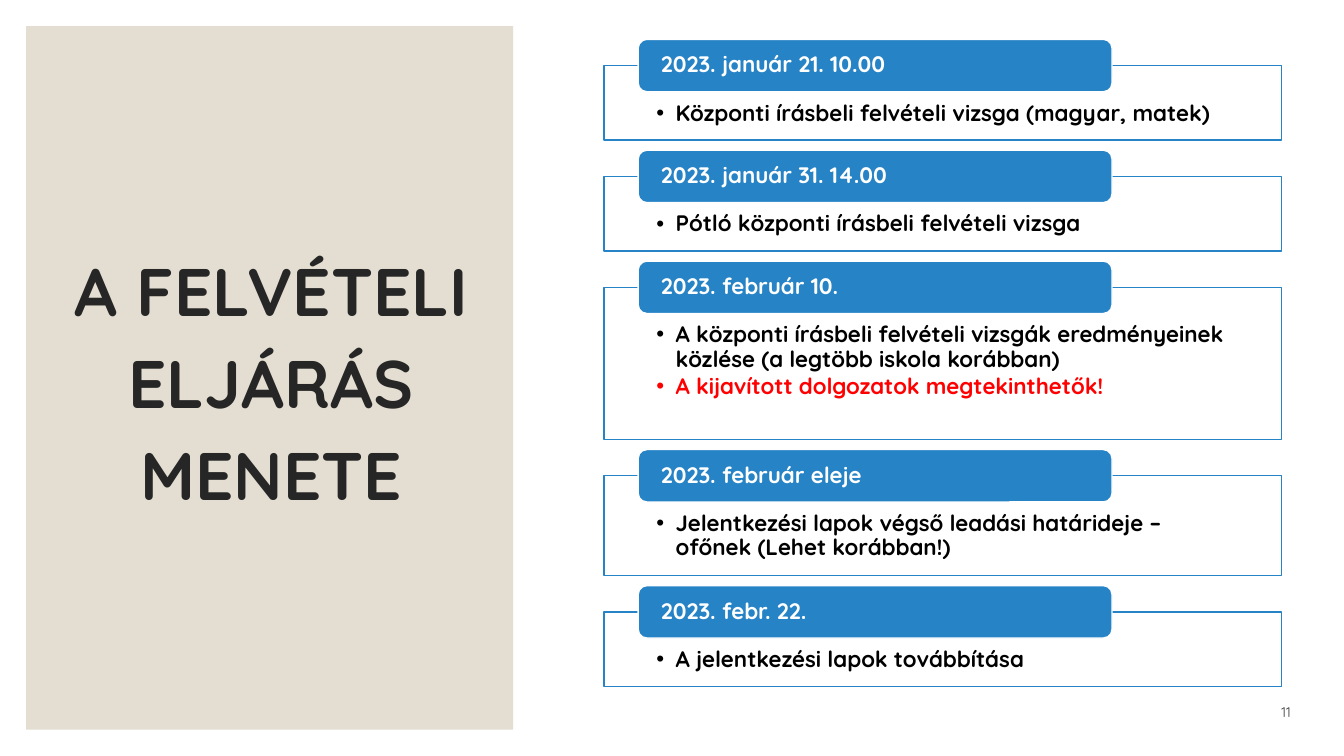
from pptx import Presentation
from pptx.dml.color import RGBColor
from pptx.enum.shapes import MSO_SHAPE
from pptx.enum.text import MSO_ANCHOR, PP_ALIGN
from pptx.oxml.ns import qn
from pptx.util import Inches, Pt
from lxml.etree import SubElement

WHITE = RGBColor(0xFF, 0xFF, 0xFF)
BLACK = RGBColor(0, 0, 0)
RED = RGBColor(0xFF, 0, 0)
BLUE = RGBColor(0x26, 0x83, 0xC6)
SAND = RGBColor(0xE3, 0xDE, 0xD1)
DARK = RGBColor(0x26, 0x26, 0x26)
GREY = RGBColor(0x40, 0x40, 0x40)
FONT = "Quicksand"

TITLE = "A FELVÉTELI ELJÁRÁS MENETE"
PAGE = "11"
STEPS = [
    ("2023. január 21. 10.00", 0.74,
     [("Központi írásbeli felvételi vizsga (magyar, matek)", BLACK)]),
    ("2023. január 31. 14.00", 0.74,
     [("Pótló központi írásbeli felvételi vizsga", BLACK)]),
    ("2023. február 10.", 1.51,
     [("A központi írásbeli felvételi vizsgák eredményeinek közlése "
       "(a legtöbb iskola korábban)", BLACK),
      ("A kijavított dolgozatok megtekinthetők!", RED)]),
    ("2023. február eleje", 0.99,
     [("Jelentkezési lapok végső leadási határideje – ofőnek "
       "(Lehet korábban!)", BLACK)]),
    ("2023. febr. 22.", 0.74,
     [("A jelentkezési lapok továbbítása", BLACK)]),
]
BOX_LEFT, BOX_WIDTH, FIRST_TOP, GAP = 5.99, 6.72, 0.65, 0.36
TAB_LEFT, TAB_WIDTH, TAB_HEIGHT, TAB_RISE = 6.33, 4.7, 0.52, 0.26


def add_panel(shapes, kind, box, fill, line=None):
    s = shapes.add_shape(kind, *map(Inches, box))
    s.shadow.inherit = False
    s.fill.solid()
    s.fill.fore_color.rgb = fill
    if line is None:
        s.line.fill.background()
    else:
        s.line.color.rgb = line
        s.line.width = Pt(1)
    return s


def set_frame(s, insets, anchor):
    tf = s.text_frame
    tf.word_wrap = True
    tf.vertical_anchor = anchor
    (tf.margin_left, tf.margin_top,
     tf.margin_right, tf.margin_bottom) = map(Inches, insets)
    return tf


def write(p, text, size=16, color=BLACK, bold=True, align=PP_ALIGN.LEFT,
          spacing=0.9, after=0, bullet=False):
    p.alignment = align
    p.line_spacing = spacing
    p.space_after = Pt(after)
    if bullet:
        pPr = p._p.get_or_add_pPr()
        pPr.set("marL", str(Inches(0.19)))
        pPr.set("indent", str(Inches(-0.19)))
        SubElement(pPr, qn("a:buFont"), typeface="Arial")
        SubElement(pPr, qn("a:buChar"), char="•")
    r = p.add_run()
    r.text = text
    r.font.name = FONT
    r.font.size = Pt(size)
    r.font.bold = bold
    r.font.color.rgb = color


def add_step(shapes, top, date, height, items):
    box = add_panel(shapes, MSO_SHAPE.RECTANGLE,
                    (BOX_LEFT, top, BOX_WIDTH, height), WHITE, BLUE)
    color = box.fill._xPr.find(qn("a:solidFill"))[0]
    SubElement(color, qn("a:alpha"), val="90000")
    tf = set_frame(box, (0.52, 0.36, 0.52, 0.12), MSO_ANCHOR.TOP)
    for i, (text, text_color) in enumerate(items):
        p = tf.add_paragraph() if i else tf.paragraphs[0]
        write(p, text, color=text_color, after=2.4, bullet=True)
    tab = add_panel(shapes, MSO_SHAPE.ROUNDED_RECTANGLE,
                    (TAB_LEFT, top - TAB_RISE, TAB_WIDTH, TAB_HEIGHT),
                    BLUE, WHITE)
    tf = set_frame(tab, (0.2, 0, 0.2, 0), MSO_ANCHOR.MIDDLE)
    write(tf.paragraphs[0], date, color=WHITE)


def main():
    prs = Presentation()
    prs.slide_width, prs.slide_height = Inches(13.33), Inches(7.5)
    shapes = prs.slides.add_slide(prs.slide_layouts[6]).shapes

    add_panel(shapes, MSO_SHAPE.RECTANGLE, (0.26, 0.26, 4.83, 6.98), SAND)
    title = shapes.add_textbox(*map(Inches, (0.63, 0.61, 4.12, 6.24)))
    tf = set_frame(title, (0, 0, 0, 0), MSO_ANCHOR.MIDDLE)
    write(tf.paragraphs[0], TITLE, size=48, color=DARK,
          align=PP_ALIGN.CENTER, spacing=1.14)

    page = shapes.add_textbox(*map(Inches, (12, 6.9, 0.9, 0.3)))
    tf = set_frame(page, (0.1, 0.05, 0.1, 0.05), MSO_ANCHOR.BOTTOM)
    write(tf.paragraphs[0], PAGE, size=10, color=GREY, bold=False,
          align=PP_ALIGN.RIGHT, spacing=1.0)

    top = FIRST_TOP
    for date, height, items in STEPS:
        add_step(shapes, top, date, height, items)
        top += height + GAP

    prs.save("out.pptx")


if __name__ == "__main__":
    main()
